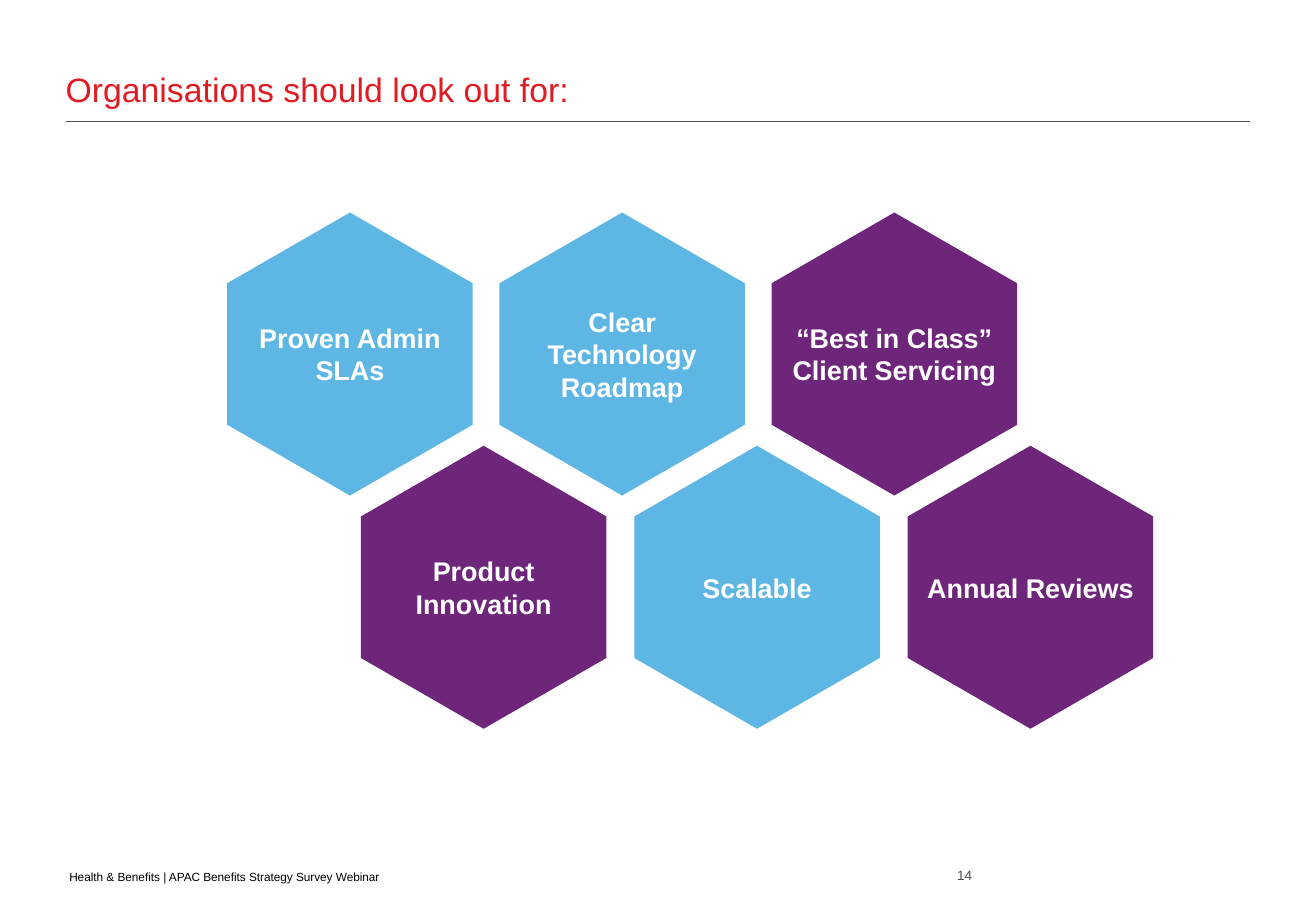
"""Build the slide of six hexagons listing what organisations should look out for."""
from dataclasses import dataclass

import pptx
import pptx.dml.color
import pptx.enum.shapes
import pptx.enum.text
import pptx.oxml
import pptx.slide
import pptx.text.text
import pptx.util

Inches = pptx.util.Inches
RGBColor = pptx.dml.color.RGBColor
PP_ALIGN = pptx.enum.text.PP_ALIGN
MSO_ANCHOR = pptx.enum.text.MSO_ANCHOR

RED = RGBColor(0xE1, 0x1B, 0x22)
GREY = RGBColor(0x4D, 0x4F, 0x53)
BLACK = RGBColor(0x00, 0x00, 0x00)
WHITE = RGBColor(0xFF, 0xFF, 0xFF)
BLUE = RGBColor(0x5E, 0xB6, 0xE4)
PURPLE = RGBColor(0x6E, 0x26, 0x7B)

FONT = "Arial"
HEX_W, HEX_H = 2.02, 2.33


@dataclass(frozen=True)
class Label:
    text: str
    left: float
    top: float
    width: float
    height: float
    size: int
    color: RGBColor
    align: PP_ALIGN = PP_ALIGN.LEFT


@dataclass(frozen=True)
class Hexagon:
    text: str
    fill: RGBColor


@dataclass(frozen=True)
class HexRow:
    left: float
    top: float
    pitch: float
    hexagons: tuple[Hexagon, ...]


LABELS = (
    Label("Organisations should look out for:", 0.54, 0.33, 9.75, 0.57, 20, RED),
    Label("Health & Benefits | APAC Benefits Strategy Survey Webinar",
          0.57, 7.16, 7.12, 0.12, 7, BLACK),
    Label("14", 7.58, 7.14, 0.42, 0.13, 8, GREY, PP_ALIGN.RIGHT),
)

ROWS = (
    HexRow(1.87, 1.75, 2.24, (
        Hexagon("Proven Admin SLAs", BLUE),
        Hexagon("Clear Technology Roadmap", BLUE),
        Hexagon("“Best in Class”\nClient Servicing", PURPLE),
    )),
    HexRow(2.97, 3.67, 2.25, (
        Hexagon("Product Innovation", PURPLE),
        Hexagon("Scalable", BLUE),
        Hexagon("Annual Reviews", PURPLE),
    )),
)


def write_text(tf: pptx.text.text.TextFrame, text: str, size: int, color: RGBColor,
               align: PP_ALIGN, bold: bool = False) -> None:
    tf.text = text
    tf.word_wrap = True
    for p in tf.paragraphs:
        p.alignment = align
        for r in p.runs:
            r.font.name = FONT
            r.font.size = pptx.util.Pt(size)
            r.font.bold = bold
            r.font.color.rgb = color


def add_label(s: pptx.slide.Slide, label: Label) -> None:
    box = (label.left, label.top, label.width, label.height)
    tf = s.shapes.add_textbox(*map(Inches, box)).text_frame
    tf.margin_left = tf.margin_top = tf.margin_right = tf.margin_bottom = 0
    tf.vertical_anchor = MSO_ANCHOR.BOTTOM
    write_text(tf, label.text, label.size, label.color, label.align)


def add_hexagon(s: pptx.slide.Slide, hexagon: Hexagon, left: float, top: float) -> None:
    corners = ((0.5, 0), (1, 0.25), (1, 0.75), (0.5, 1), (0, 0.75), (0, 0.25))
    points = [(Inches(left + x * HEX_W), Inches(top + y * HEX_H)) for x, y in corners]
    builder = s.shapes.build_freeform(*points[0])
    builder.add_line_segments(points[1:], close=True)
    sp = builder.convert_to_shape()
    sp.shadow.inherit = False
    sp.fill.solid()
    sp.fill.fore_color.rgb = hexagon.fill
    sp.line.fill.background()
    sp.text_frame.vertical_anchor = MSO_ANCHOR.MIDDLE
    write_text(sp.text_frame, hexagon.text, 16, WHITE, PP_ALIGN.CENTER, bold=True)


def add_title_rule(s: pptx.slide.Slide) -> None:
    ends = map(Inches, (0.54, 1, 10.29, 1))
    rule = s.shapes.add_connector(pptx.enum.shapes.MSO_CONNECTOR.STRAIGHT, *ends)
    rule.line.color.rgb = GREY
    rule.line.width = pptx.util.Pt(0.75)
    sp_pr = rule._element.spPr
    sp_pr.append(pptx.oxml.parse_xml(
        '<a:effectLst xmlns:a="http://schemas.openxmlformats.org/drawingml/2006/main"/>'))


def main() -> None:
    prs = pptx.Presentation()
    prs.slide_width, prs.slide_height = Inches(10.83), Inches(7.5)
    s = prs.slides.add_slide(prs.slide_layouts[6])
    add_title_rule(s)
    for label in LABELS:
        add_label(s, label)
    for row in ROWS:
        for i, hexagon in enumerate(row.hexagons):
            add_hexagon(s, hexagon, row.left + i * row.pitch, row.top)
    prs.save("out.pptx")


if __name__ == "__main__":
    main()
